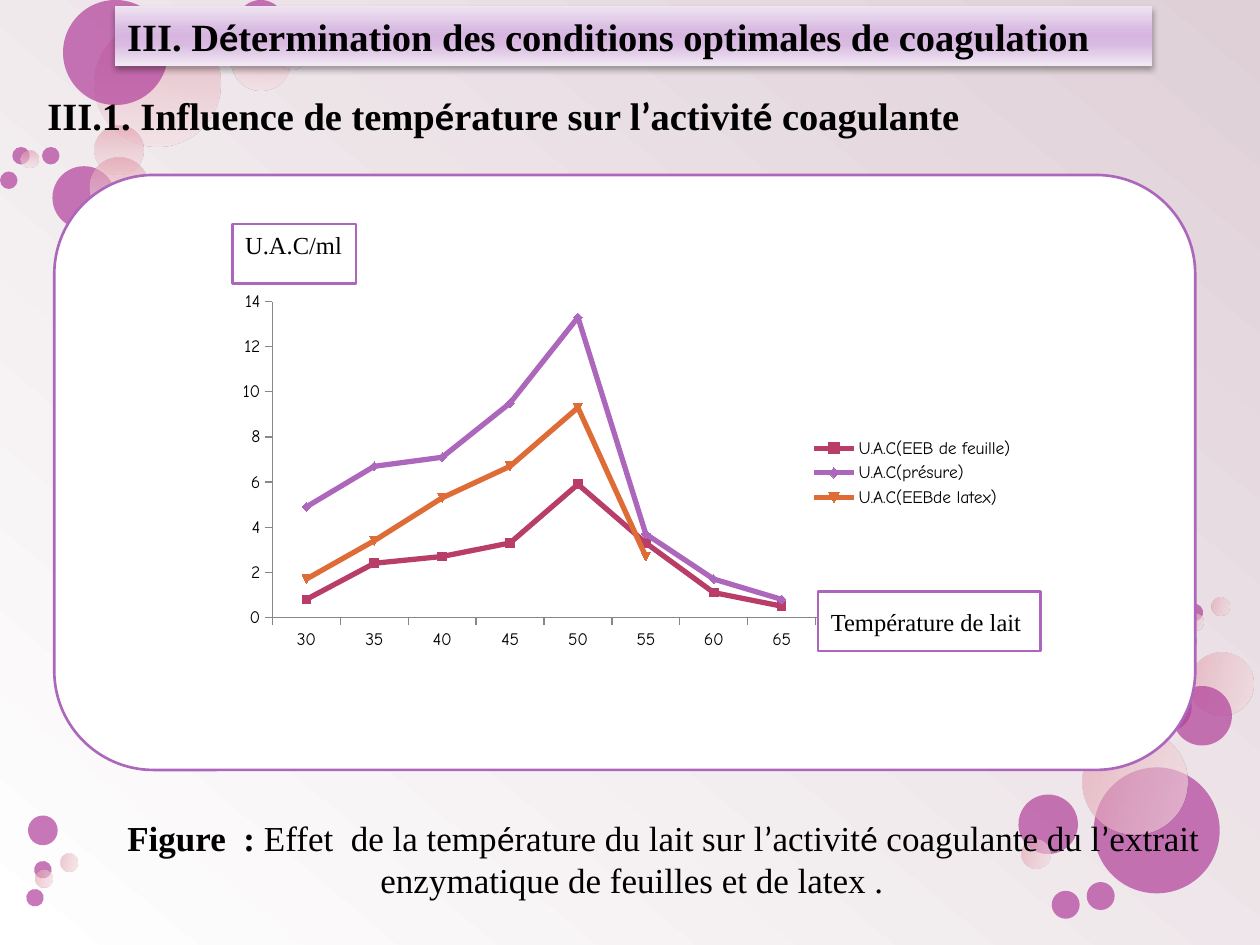
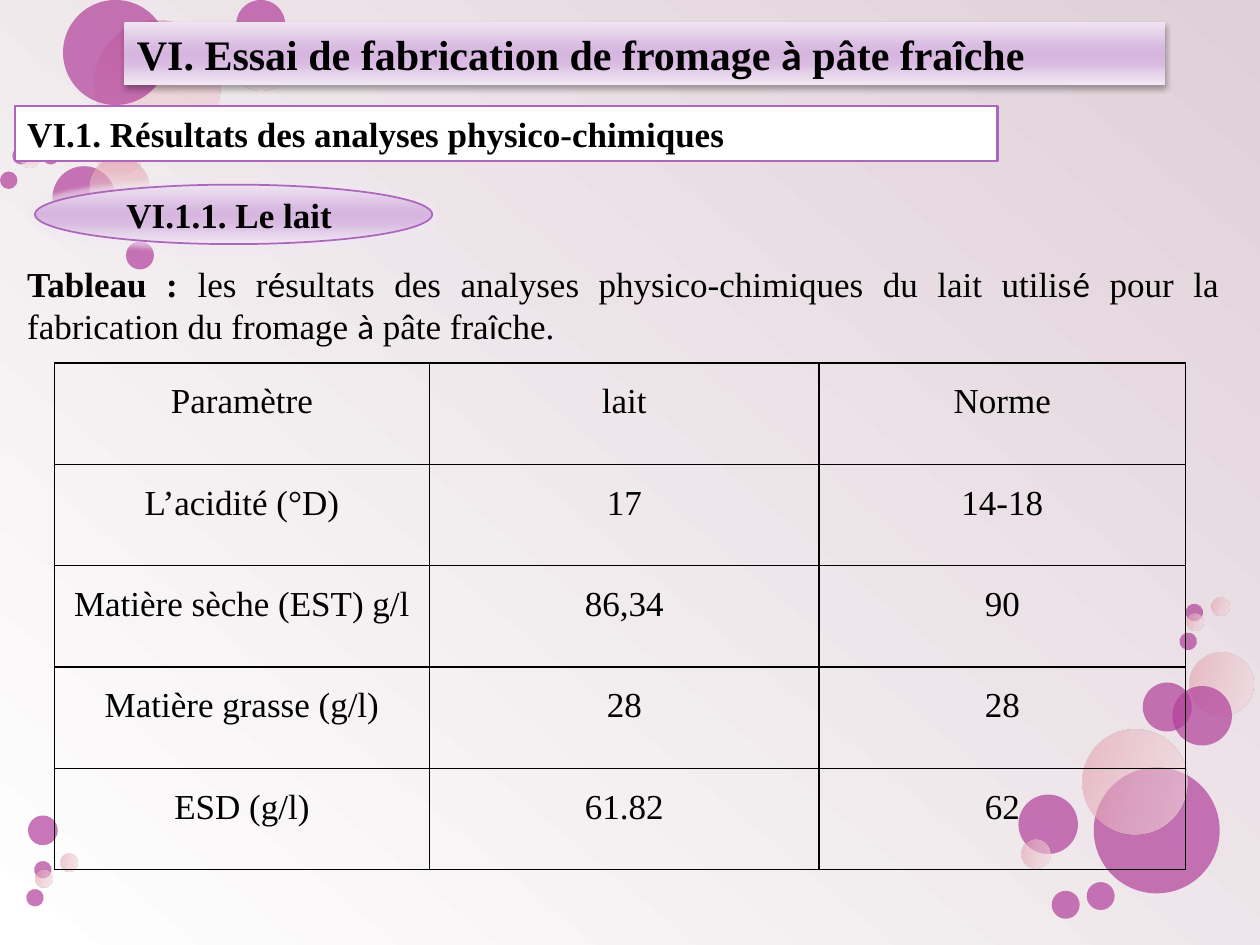
from itertools import groupby

from pptx import Presentation
from pptx.chart.data import CategoryChartData
from pptx.dml.color import RGBColor
from pptx.enum.chart import XL_CHART_TYPE, XL_LEGEND_POSITION, XL_TICK_MARK
from pptx.enum.shapes import MSO_SHAPE
from pptx.enum.text import MSO_ANCHOR, MSO_AUTO_SIZE, PP_ALIGN
from pptx.oxml import parse_xml
from pptx.oxml.ns import nsdecls, qn
from pptx.util import Pt

# Shared look
SERIF, ACCENT_FONT, CHART_FONT = "Times New Roman", "Calibri", "Comic Neue"
ACCENTS = "é’àî"
BLACK, WHITE, VIOLET, AXIS_GREY = "000000", "FFFFFF", "AC66BB", "878787"
PURPLE = "B13F9A"
PINK = [(0, "E296A8"), (50, "EBC0C9"), (100, "F5E0E5")]
LILAC = [(0, "EFE4F2"), (40, "D9BBE1"), (50, "D6B5DF"), (65, "D9BBE1"), (100, "F2E9F4")]

# Bubbles as left, top, diameter
UPPER_BUBBLES = [
    (PINK, 54, 12, 72), (PURPLE, 30, 95, 36), (PINK, 54, 72, 28), (PINK, 51, 90, 34),
    (PURPLE, 36, 0, 60), (PURPLE, 135, 0, 28), (PINK, 132, 18, 34), (PINK, 159, 24, 16),
    (PURPLE, 7, 84, 10), (PURPLE, 0, 98, 10), (PINK, 12, 86, 10), (PURPLE, 24, 84, 10),
]
OPEN_BUBBLES = [(PURPLE, 81, 120, 16), (PURPLE, 72, 138, 16)]
LOWER_BUBBLES = [
    (PURPLE, 625, 438.5, 72), (PINK, 680, 373, 36), (PURPLE, 653, 390, 28),
    (PURPLE, 670, 392, 34), (PINK, 618.5, 417, 60), (PURPLE, 16, 466, 17),
    (PURPLE, 582, 454, 34), (PINK, 584, 480, 16), (PURPLE, 601, 509, 16),
    (PURPLE, 677.5, 345, 10), (PURPLE, 621, 504, 16), (PINK, 692.5, 341.5, 10),
    (PINK, 678, 350.5, 10), (PURPLE, 674, 361.5, 10), (PURPLE, 19.5, 492, 10),
    (PINK, 34.5, 488, 10), (PINK, 20, 497, 10), (PURPLE, 15, 508, 10),
]

TEMPERATURES = ["30", "35", "40", "45", "50", "55", "60", "65", ""]
ACTIVITIES = [
    ("U.A.C(EEB de feuille)", "B83D68", [0.8, 2.4, 2.7, 3.3, 5.9, 3.3, 1.1, 0.5, None]),
    ("U.A.C(présure)", VIOLET, [4.9, 6.7, 7.1, 9.5, 13.3, 3.7, 1.7, 0.8, None]),
    ("U.A.C(EEBde latex)", "DE6C36", [1.7, 3.4, 5.3, 6.7, 9.3, 2.7, None, None, None]),
]
MILK_ANALYSES = [
    ("Paramètre", "lait", "Norme"),
    ("L’acidité (°D)", "17", "14-18"),
    ("Matière sèche (EST) g/l", "86,34", "90"),
    ("Matière grasse (g/l)", "28", "28"),
    ("ESD (g/l)", "61.82", "62"),
]


def rgb(colour):
    return RGBColor.from_string(colour)


def points(box):
    return [Pt(length) for length in box]


# Painting
def paint_solid(shape, colour, alpha=100):
    shape.fill.solid()
    shape.fill.fore_color.rgb = rgb(colour)
    if alpha < 100:
        tint = shape.element.spPr.find(qn("a:solidFill"))[0]
        tint.append(parse_xml(f'<a:alpha {nsdecls("a")} val="{alpha * 1000}"/>'))


def paint_gradient(shape, stops, alpha=100):
    shape.fill.gradient()
    shape.fill.gradient_angle = 270
    stop_list = shape.element.spPr.find(qn("a:gradFill")).find(qn("a:gsLst"))
    for default_stop in list(stop_list):
        stop_list.remove(default_stop)
    for position, colour in stops:
        stop_list.append(parse_xml(
            f'<a:gs {nsdecls("a")} pos="{position * 1000}"><a:srgbClr val="{colour}">'
            f'<a:alpha val="{alpha * 1000}"/></a:srgbClr></a:gs>'))


def outline(shape, colour=None, width=1.5):
    if colour is None:
        shape.line.fill.background()
    else:
        shape.line.color.rgb = rgb(colour)
        shape.line.width = Pt(width)


def add_effect(shape, kind, attributes, colour, alpha):
    shape.shadow.inherit = False
    shape.element.spPr.find(qn("a:effectLst")).append(parse_xml(
        f'<a:{kind} {nsdecls("a")} {attributes}><a:srgbClr val="{colour}">'
        f'<a:alpha val="{alpha * 1000}"/></a:srgbClr></a:{kind}>'))


def add_plain_shape(slide, preset, box):
    shape = slide.shapes.add_shape(preset, *points(box))
    shape.shadow.inherit = False
    return shape


# Text
def set_font(font, size, bold=False, name=SERIF):
    font.name, font.size, font.bold = name, Pt(size), bold
    font.color.rgb = rgb(BLACK)


def write_plain(shape, text, size, bold=False, align=PP_ALIGN.LEFT,
                anchor=MSO_ANCHOR.MIDDLE, wrap=True):
    frame = shape.text_frame
    frame.word_wrap, frame.vertical_anchor = wrap, anchor
    paragraph = frame.paragraphs[0]
    paragraph.text, paragraph.alignment = text, align
    set_font(paragraph.font, size, bold)


def write_mixed(shape, pieces, size, align=PP_ALIGN.LEFT, wrap=True):
    """Set (text, bold) pieces, with the accents in their own font."""
    frame = shape.text_frame
    frame.word_wrap, frame.vertical_anchor = wrap, MSO_ANCHOR.MIDDLE
    frame.auto_size = MSO_AUTO_SIZE.NONE
    paragraph = frame.paragraphs[0]
    paragraph.alignment = align
    for text, bold in pieces:
        for accented, letters in groupby(text, lambda letter: letter in ACCENTS):
            run = paragraph.add_run()
            run.text = "".join(letters)
            set_font(run.font, size, bold, ACCENT_FONT if accented else SERIF)
    return paragraph


# Regions shared by the slides
def add_bubbles(slide, bubbles, rotation=0):
    for paint, left, top, diameter in bubbles:
        bubble = add_plain_shape(slide, MSO_SHAPE.OVAL, (left, top, diameter, diameter))
        bubble.rotation = rotation
        if paint is PINK:
            paint_gradient(bubble, PINK, 60)
        else:
            paint_solid(bubble, paint, 70)
        outline(bubble)


def add_banner(slide, box, text, size):
    banner = slide.shapes.title
    banner.left, banner.top, banner.width, banner.height = points(box)
    paint_gradient(banner, LILAC)
    add_effect(banner, "outerShdw",
               f'blurRad="{Pt(3.5)}" dist="{Pt(2.2)}" dir="5400000" rotWithShape="0"', BLACK, 32)
    write_mixed(banner, [(text, True)], size)
    slide.shapes.element.append(banner.element)  # in front of the bubbles


def start_slide(prs, banner_box, title, size, extra_bubbles=()):
    slide = prs.slides.add_slide(prs.slide_layouts[5])
    add_bubbles(slide, [*UPPER_BUBBLES, *extra_bubbles])
    add_bubbles(slide, LOWER_BUBBLES, 283.3)
    add_banner(slide, banner_box, title, size)
    return slide


def add_frame(slide, box, preset=MSO_SHAPE.RECTANGLE):
    frame = add_plain_shape(slide, preset, box)
    paint_solid(frame, WHITE)
    outline(frame, VIOLET)
    return frame


# Activity chart with its axis labels
def add_activity_chart(slide, box):
    left, top, width, height = box
    unit_label = add_frame(slide, (left, top - 33.5, 70.5, 34))
    write_plain(unit_label, "U.A.C/ml", 14, anchor=MSO_ANCHOR.TOP, wrap=False)

    data = CategoryChartData()
    data.categories = TEMPERATURES
    for name, _, values in ACTIVITIES:
        data.add_series(name, values)
    chart = slide.shapes.add_chart(XL_CHART_TYPE.LINE_MARKERS, *points(box), data).chart
    set_font(chart.font, 10, name=CHART_FONT)
    chart.has_title = False
    chart.has_legend = True
    chart.legend.position = XL_LEGEND_POSITION.RIGHT
    chart.legend.include_in_layout = False
    for axis in (chart.category_axis, chart.value_axis):
        axis.has_major_gridlines = False
        axis.major_tick_mark = XL_TICK_MARK.OUTSIDE
        axis.format.line.color.rgb = rgb(AXIS_GREY)
    chart.value_axis.minimum_scale, chart.value_axis.maximum_scale = 0, 14
    chart.value_axis.major_unit = 2
    plot = chart.plots[0]
    plot.vary_by_categories = False
    for series, (_, colour, _) in zip(plot.series, ACTIVITIES):
        series.smooth = False
        series.format.line.color.rgb = rgb(colour)
        series.format.line.width = Pt(3)
        series.marker.format.fill.solid()
        series.marker.format.fill.fore_color.rgb = rgb(colour)
        series.marker.format.line.color.rgb = rgb(colour)

    # Fixed plot area
    plot_area = chart.element.chart.plotArea
    for layout in plot_area.findall(qn("c:layout")):
        plot_area.remove(layout)
    shares = "".join(f'<c:{key} val="{share}"/>' for key, share in
                     (("x", 0.05), ("y", 0.05), ("w", 0.77), ("h", 0.83)))
    plot_area.insert(0, parse_xml(
        f'<c:layout {nsdecls("c")}><c:manualLayout><c:layoutTarget val="inner"/>'
        f'<c:xMode val="edge"/><c:yMode val="edge"/>{shares}</c:manualLayout></c:layout>'))

    temperature_label = add_frame(slide, (left + 334.5, top + 176.5, 127, 34))
    write_plain(temperature_label, "Température de lait ", 14, align=PP_ALIGN.CENTER, wrap=False)


# Milk table
def add_milk_table(slide, box):
    table = slide.shapes.add_table(len(MILK_ANALYSES), 3, *points(box)).table
    table.first_row = table.horz_banding = False
    for column, width in zip(table.columns, (214.5, 222.5, 209.5)):
        column.width = Pt(width)
    for row, texts in zip(table.rows, MILK_ANALYSES):
        row.height = Pt(box[3] / len(MILK_ANALYSES))
        for cell, text in zip(row.cells, texts):
            cell.fill.background()
            cell.margin_left = cell.margin_right = Pt(5)
            cell.margin_top = cell.margin_bottom = 0
            paragraph = cell.text_frame.paragraphs[0]
            paragraph.text, paragraph.alignment = text, PP_ALIGN.CENTER
            paragraph.line_spacing, paragraph.space_before = 1.5, Pt(12)
            set_font(paragraph.font, 20)
            for index, side in enumerate("LRTB"):
                cell._tc.tcPr.insert(index, parse_xml(
                    f'<a:ln{side} {nsdecls("a")} w="{Pt(1)}"><a:solidFill>'
                    f'<a:srgbClr val="{BLACK}"/></a:solidFill></a:ln{side}>'))


def build_temperature_slide(prs):
    slide = start_slide(prs, (65.5, 3.5, 593, 34),
                        "III. Détermination des conditions optimales de coagulation", 22)
    add_frame(slide, (31, 100, 652, 340), MSO_SHAPE.ROUNDED_RECTANGLE)
    heading = slide.shapes.add_textbox(*points((20, 49, 553, 34)))
    write_mixed(heading, [("III.1. Influence de température sur l’activité coagulante", True)],
                22, wrap=False)
    caption = slide.shapes.add_textbox(*points((8.5, 463, 705.5, 55.5)))
    paragraph = write_mixed(caption, [
        ("Figure  :", True),
        (" Effet  de la température du lait sur l’activité coagulante du l’extrait "
         "enzymatique de feuilles et de latex .", False)], 20, PP_ALIGN.CENTER)
    paragraph._p.get_or_add_pPr().set("indent", str(Pt(35.5)))
    add_activity_chart(slide, (133, 161.5, 453.5, 217.5))


def build_milk_slide(prs):
    slide = start_slide(prs, (71, 12.5, 595, 36),
                        "VI. Essai de fabrication de fromage à pâte fraîche", 24, OPEN_BUBBLES)
    add_milk_table(slide, (31, 207.5, 646.5, 289.5))
    caption = slide.shapes.add_textbox(*points((8.5, 146.5, 695, 55.5)))
    write_mixed(caption, [
        ("Tableau :", True),
        (" les résultats des analyses physico-chimiques du lait utilisé pour la fabrication "
         "du fromage à pâte fraîche.", False)], 20, PP_ALIGN.JUSTIFY)
    heading = add_frame(slide, (8.5, 60.5, 561.5, 31.5))
    write_plain(heading, "VI.1. Résultats des analyses physico-chimiques", 20, True)
    milk_label = add_plain_shape(slide, MSO_SHAPE.OVAL, (20, 105.5, 227, 34))
    paint_gradient(milk_label, LILAC)
    outline(milk_label, VIOLET, 1)
    add_effect(milk_label, "glow", f'rad="{Pt(5)}"', "F2E9F4", 60)
    write_plain(milk_label, "VI.1.1. Le lait ", 20, True, PP_ALIGN.CENTER, wrap=False)


def main():
    prs = Presentation()
    prs.slide_width, prs.slide_height = Pt(720), Pt(540)
    backdrop = prs.slide_master.background.fill
    backdrop.gradient()
    backdrop.gradient_angle = 230
    for stop, colour in zip(backdrop.gradient_stops, ("DFD0D7", WHITE)):
        stop.color.rgb = rgb(colour)
    build_temperature_slide(prs)
    build_milk_slide(prs)
    prs.save("out.pptx")


if __name__ == "__main__":
    main()
